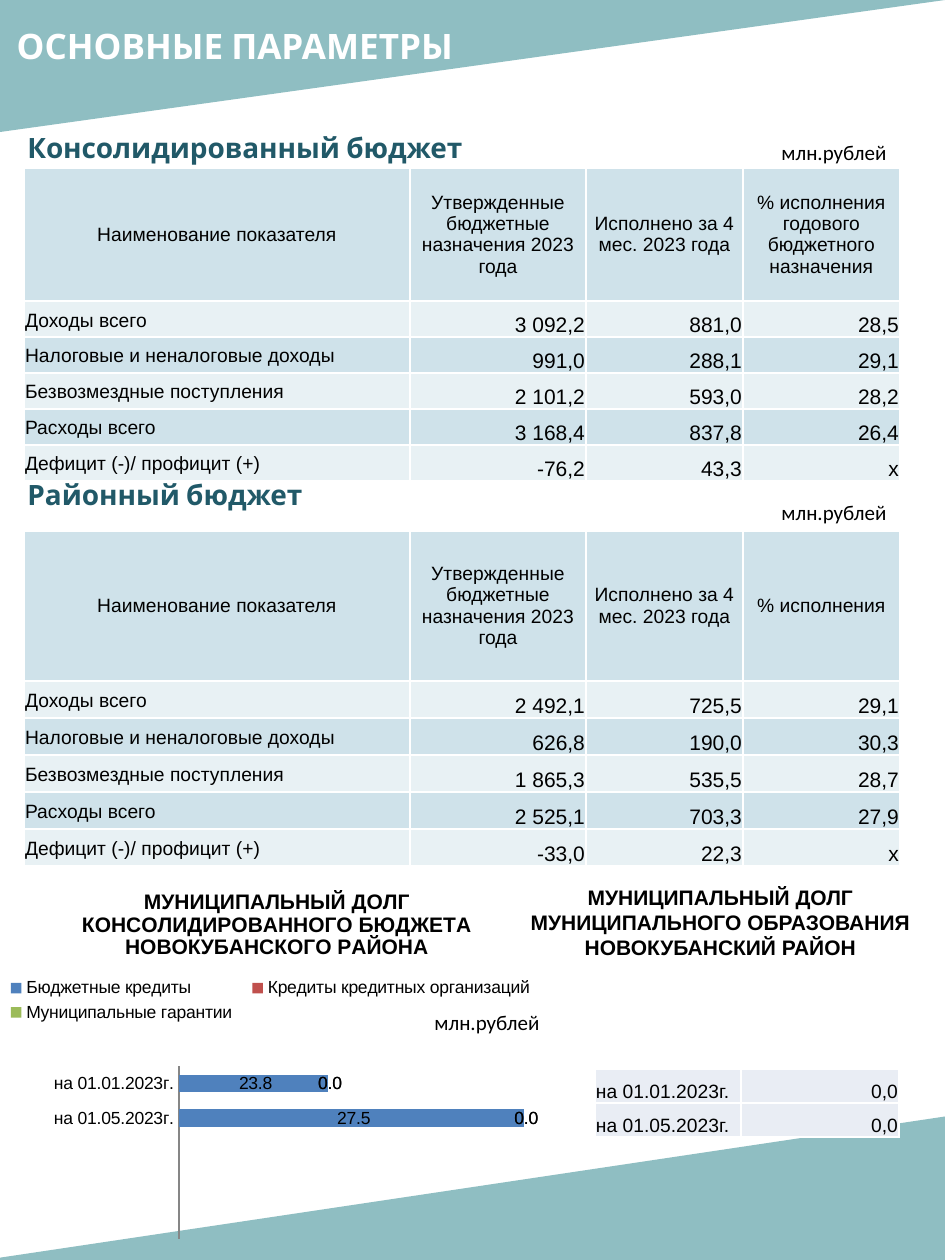
from typing import NamedTuple

from lxml.etree import SubElement
from pptx import Presentation
from pptx.chart.data import CategoryChartData
from pptx.dml.color import RGBColor
from pptx.enum.chart import XL_CHART_TYPE, XL_LEGEND_POSITION, XL_TICK_MARK
from pptx.enum.shapes import MSO_SHAPE
from pptx.enum.text import MSO_ANCHOR, MSO_AUTO_SIZE, PP_ALIGN
from pptx.oxml import parse_xml
from pptx.oxml.ns import nsdecls, qn
from pptx.util import Emu, Pt

PX_PER_INCH = 126
TEAL, HEADING, WHITE, BLACK = "519AA0", "215968", "FFFFFF", "000000"
DARK_BAND, LIGHT_BAND, PALE = "CFE2EA", "E8F1F4", "E9EDF4"


class Box(NamedTuple):
    left: int
    top: int
    width: int
    height: int


class Band(NamedTuple):
    box: Box
    flip: str


class Label(NamedTuple):
    text: str
    box: Box
    style: dict


class BudgetTable(NamedTuple):
    top: int
    header_height: int
    row_height: int
    last_header: str
    values: list[str]


class DebtSeries(NamedTuple):
    name: str
    values: list[float]
    color: str


HEADING_STYLE = dict(size=16, font="Cabin", color=HEADING, bold=True)
UNIT_STYLE = dict(size=12, font="Calibri", wrap=False)
DEBT_STYLE = dict(size=12, bold=True, align=PP_ALIGN.CENTER)

BANDS = [Band(Box(0, 0, 945, 132), "flipH"), Band(Box(-16, 1116, 964, 144), "flipV")]
LABELS = [
    Label("Консолидированный бюджет", Box(15, 124, 614, 46), HEADING_STYLE),
    Label("Районный бюджет", Box(15, 471, 614, 46), HEADING_STYLE),
    *[Label("млн.рублей", Box(left, top, 130, 38), UNIT_STYLE)
      for left, top in [(769, 133), (769, 493), (422, 1003)]],
    Label("МУНИЦИПАЛЬНЫЙ ДОЛГ МУНИЦИПАЛЬНОГО ОБРАЗОВАНИЯ НОВОКУБАНСКИЙ РАЙОН",
          Box(486, 878, 469, 115), DEBT_STYLE),
]
COLUMN_WIDTHS = [386, 176, 157, 157]
HEADERS = ["Наименование показателя", "Утвержденные бюджетные назначения 2023 года",
           "Исполнено за 4 мес. 2023 года"]
INDICATORS = ["Доходы всего", "Налоговые и неналоговые доходы", "Безвозмездные поступления",
              "Расходы всего", "Дефицит (-)/ профицит (+)"]
BUDGETS = [
    BudgetTable(168, 133, 36, "% исполнения годового бюджетного назначения",
                ["3 092,2|881,0|28,5", "991,0|288,1|29,1", "2 101,2|593,0|28,2",
                 "3 168,4|837,8|26,4", "-76,2|43,3|х"]),
    BudgetTable(531, 150, 37, "% исполнения",
                ["2 492,1|725,5|29,1", "626,8|190,0|30,3", "1 865,3|535,5|28,7",
                 "2 525,1|703,3|27,9", "-33,0|22,3|х"]),
]
DATES = ["на 01.01.2023г.", "на 01.05.2023г."]
DEBT_TITLE = ["МУНИЦИПАЛЬНЫЙ ДОЛГ", "КОНСОЛИДИРОВАННОГО БЮДЖЕТА", "НОВОКУБАНСКОГО РАЙОНА"]
DEBT = [
    DebtSeries("Бюджетные кредиты", [23.8, 27.5], "4F81BD"),
    DebtSeries("Кредиты кредитных организаций", [0, 0], "C0504D"),
    DebtSeries("Муниципальные гарантии", [0, 0], "9BBB59"),
]
EMPTY_SLOTS = 3


def px(length: int) -> Emu:
    return Emu(round(length * 914400 / PX_PER_INCH))


def place(box: Box) -> list[Emu]:
    return [px(length) for length in box]


def rgb(color: str) -> RGBColor:
    return RGBColor.from_string(color)


def style_font(font, size: float, name="Arial", color=BLACK, bold=False) -> None:
    font.size, font.name, font.bold = Pt(size), name, bold
    font.color.rgb = rgb(color)


def write(frame, text: str, *, size: float, font="Arial", color=BLACK, bold=False,
          align=PP_ALIGN.LEFT, wrap=True) -> None:
    frame.word_wrap = wrap
    paragraph = frame.paragraphs[0]
    paragraph.alignment = align
    run = paragraph.add_run()
    run.text = text
    style_font(run.font, size, font, color, bold)


def draw_band(slide, band: Band) -> None:
    shape = slide.shapes.add_shape(MSO_SHAPE.RIGHT_TRIANGLE, *place(band.box))
    shape.shadow.inherit = False
    shape.rotation = 180
    shape.fill.solid()
    shape.fill.fore_color.rgb = rgb(TEAL)
    shape.line.fill.background()
    properties = shape._element.spPr
    properties.find(qn("a:xfrm")).set(band.flip, "1")
    SubElement(next(properties.iter(qn("a:srgbClr"))), qn("a:alpha"), val="64000")


def draw_title(slide, text: str, box: Box) -> None:
    title = slide.shapes.title
    title.left, title.top, title.width, title.height = place(box)
    write(title.text_frame, text, size=20, font="Cabin", color=WHITE, bold=True)
    title.text_frame.vertical_anchor = MSO_ANCHOR.TOP
    title.text_frame.auto_size = MSO_AUTO_SIZE.NONE
    slide.shapes._spTree.append(title._element)  # bring in front of the bands


def draw_label(slide, label: Label) -> None:
    frame = slide.shapes.add_textbox(*place(label.box)).text_frame
    write(frame, label.text, **label.style)


def fill_cell(cell, text: str, fill: str, *, padding: int, anchor=MSO_ANCHOR.BOTTOM, **style) -> None:
    cell.margin_left = cell.margin_right = px(1)
    cell.margin_top = cell.margin_bottom = px(padding)
    cell.vertical_anchor = anchor
    write(cell.text_frame, text, **style)
    for side in ("lnL", "lnR", "lnT", "lnB"):
        cell._tc.get_or_add_tcPr().append(parse_xml(
            f'<a:{side} {nsdecls("a")} w="12700"><a:solidFill>'
            f'<a:srgbClr val="{WHITE}"/></a:solidFill></a:{side}>'))
    cell.fill.solid()
    cell.fill.fore_color.rgb = rgb(fill)


def add_grid(slide, left: int, top: int, widths: list[int], heights: list[int]):
    box = Box(left, top, sum(widths), sum(heights))
    table = slide.shapes.add_table(len(heights), len(widths), *place(box)).table
    table.first_row = table.horz_banding = False
    for column, width in zip(table.columns, widths):
        column.width = px(width)
    for row, height in zip(table.rows, heights):
        row.height = px(height)
    return table


def draw_budget(slide, budget: BudgetTable) -> None:
    heights = [budget.header_height] + [budget.row_height] * len(INDICATORS)
    table = add_grid(slide, 24, budget.top, COLUMN_WIDTHS, heights)
    for column, text in enumerate([*HEADERS, budget.last_header]):
        fill_cell(table.cell(0, column), text, DARK_BAND, padding=6, size=11,
                  anchor=MSO_ANCHOR.MIDDLE, align=PP_ALIGN.CENTER)
    for row, (indicator, values) in enumerate(zip(INDICATORS, budget.values), start=1):
        fill = LIGHT_BAND if row % 2 else DARK_BAND
        fill_cell(table.cell(row, 0), indicator, fill, padding=6, size=11)
        for column, value in enumerate(values.split("|"), start=1):
            fill_cell(table.cell(row, column), value, fill, padding=0, size=12, align=PP_ALIGN.RIGHT)


def draw_debt_table(slide) -> None:
    table = add_grid(slide, 595, 1069, [146, 158], [34] * len(DATES))
    for row, date in enumerate(DATES):
        fill_cell(table.cell(row, 0), date, PALE, padding=0, size=11)
        fill_cell(table.cell(row, 1), "0,0", PALE, padding=0, size=11, align=PP_ALIGN.RIGHT)


def set_layout(element, after: str, inner=False, **fractions: float) -> None:
    """Give a chart part a manual layout, placed after the named child (or first)."""
    for old in element.findall(qn("c:layout")):
        element.remove(old)
    parts = '<c:layoutTarget val="inner"/>' if inner else ""
    parts += '<c:xMode val="edge"/><c:yMode val="edge"/>'
    parts += "".join(f'<c:{name} val="{value}"/>' for name, value in fractions.items())
    layout = parse_xml(f'<c:layout {nsdecls("c")}><c:manualLayout>{parts}</c:manualLayout></c:layout>')
    previous = element.find(qn(after)) if after else None
    element.insert(0 if previous is None else element.index(previous) + 1, layout)


def draw_debt_chart(slide, box: Box) -> None:
    number_format = "#\\ ##0.0"
    data = CategoryChartData(number_format=number_format)
    data.categories = DATES + [""] * EMPTY_SLOTS
    for item in DEBT:
        data.add_series(item.name, item.values + [None] * EMPTY_SLOTS)
    chart = slide.shapes.add_chart(XL_CHART_TYPE.BAR_STACKED, *place(box), data).chart
    style_font(chart.font, 10)
    chart._chartSpace.chart.addnext(parse_xml(
        f'<c:spPr {nsdecls("c", "a")}><a:noFill/><a:ln><a:noFill/></a:ln></c:spPr>'))

    # Title and legend
    frame = chart.chart_title.text_frame
    for index, line in enumerate(DEBT_TITLE):
        paragraph = frame.add_paragraph() if index else frame.paragraphs[0]
        run = paragraph.add_run()
        run.text = line
        style_font(run.font, 12, bold=True)
    set_layout(chart.chart_title._element, "c:tx", x=0.14, y=0.15)
    chart.has_legend = True
    chart.legend.position = XL_LEGEND_POSITION.TOP
    chart.legend.include_in_layout = False
    set_layout(chart.legend._element, "c:legendPos", x=0.01, y=0.35, w=0.87, h=0.12)

    # Bars and their values
    plot = chart.plots[0]
    plot.gap_width, plot.overlap, plot.vary_by_categories = 95, 100, False
    set_layout(chart._chartSpace.chart.plotArea, "", inner=True, x=0.3, y=0.56, w=0.59, h=0.39)
    for series, item in zip(plot.series, DEBT):
        series.format.fill.solid()
        series.format.fill.fore_color.rgb = rgb(item.color)
        labels = series.data_labels
        labels.show_value = True
        labels.number_format, labels.number_format_is_linked = number_format, False

    # Axes
    dates, amounts = chart.category_axis, chart.value_axis
    dates.reverse_order = True
    dates.major_tick_mark = XL_TICK_MARK.NONE
    dates.format.line.color.rgb = rgb("868686")
    amounts.visible = amounts.has_major_gridlines = False
    amounts.minimum_scale, amounts.maximum_scale = 21, 28


def main() -> None:
    presentation = Presentation()
    presentation.slide_width, presentation.slide_height = px(945), px(1260)
    slide = presentation.slides.add_slide(presentation.slide_layouts[5])
    for band in BANDS:
        draw_band(slide, band)
    draw_title(slide, "ОСНОВНЫЕ ПАРАМЕТРЫ", Box(4, 18, 614, 54))
    for label in LABELS:
        draw_label(slide, label)
    for budget in BUDGETS:
        draw_budget(slide, budget)
    draw_debt_table(slide)
    draw_debt_chart(slide, Box(-10, 819, 630, 442))
    presentation.save("out.pptx")


if __name__ == "__main__":
    main()
